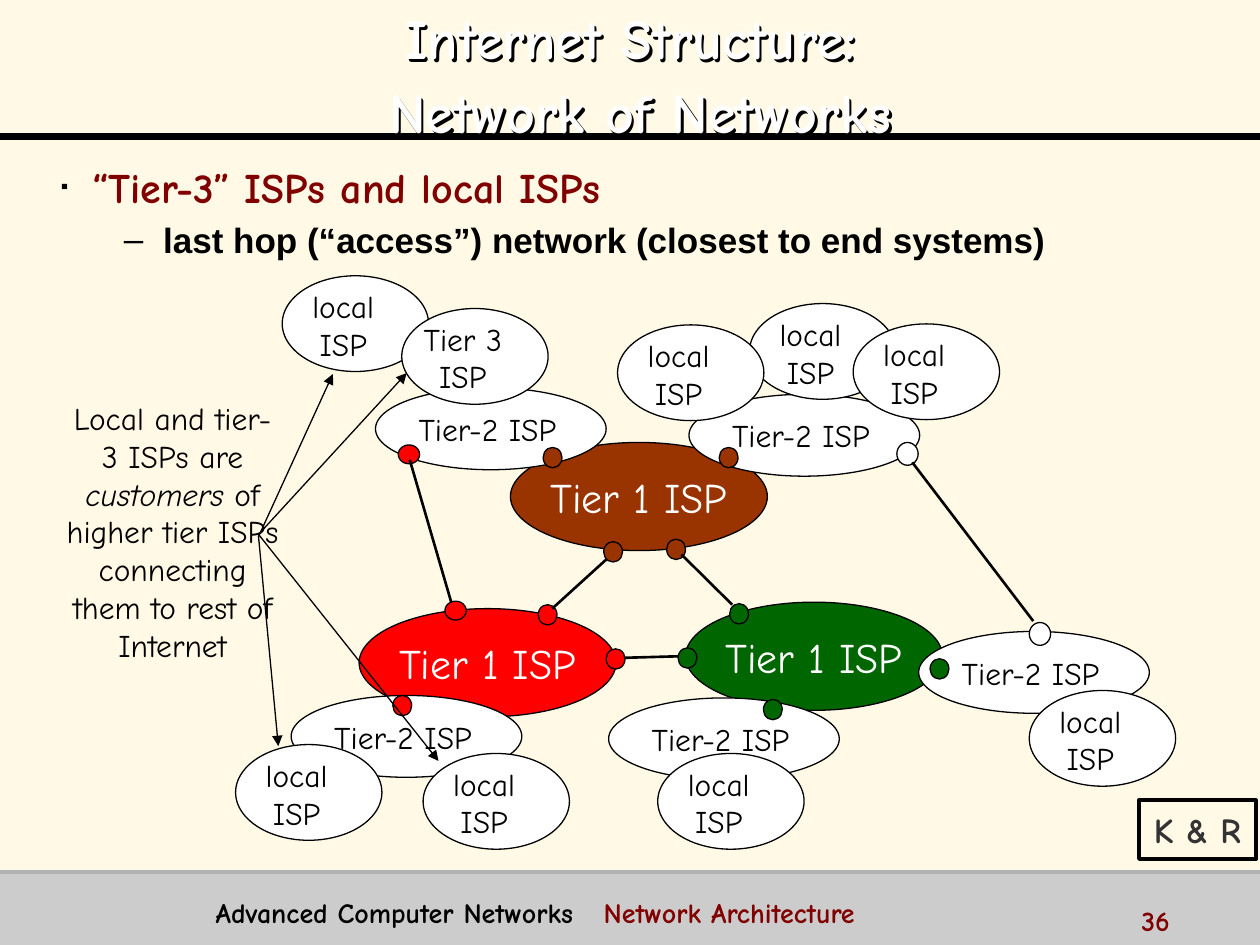
from dataclasses import dataclass

import pptx
import pptx.dml.color
import pptx.enum.shapes
import pptx.enum.text
import pptx.oxml.ns
import pptx.util
from lxml import etree

Cm, Pt = pptx.util.Cm, pptx.util.Pt
MSO_SHAPE = pptx.enum.shapes.MSO_SHAPE
ANCHOR = pptx.enum.text.MSO_ANCHOR
CENTER = pptx.enum.text.PP_ALIGN.CENTER

COMIC = "Comic Neue"
BLACK, WHITE, MAROON = "000000", "FFFFFF", "800000"
RED, BROWN, GREEN = "FF0000", "993300", "006600"
TIER1_SIZE, TIER2_SIZE, LOCAL_SIZE = (5.18, 2.18), (4.65, 1.65), (2.95, 1.93)
PORT_SIZE, TAP_SIZE, WHITE_TAP_SIZE = (0.38, 0.41), (0.43, 0.38), (0.43, 0.46)


@dataclass
class Oval:
    x: float
    y: float
    color: str = WHITE


@dataclass
class Tier2:
    x: float
    y: float
    port: Oval


@dataclass
class Access:
    x: float
    y: float
    name: str = "local"
    text_width: float = 1.85


@dataclass
class Line:
    x1: float
    y1: float
    x2: float
    y2: float


TIER1 = [Oval(7.24, 12.27, RED), Oval(10.29, 8.92, BROWN), Oval(13.82, 12.14, GREEN)]
TIER1_PORTS = [
    Oval(14.71, 12.17, GREEN), Oval(13.44, 10.87, BROWN), Oval(12.17, 10.92, BROWN),
    Oval(10.85, 12.19, RED), Oval(12.22, 13.08, RED), Oval(13.67, 13.06, GREEN),
]
TIER1_LINKS = [
    Line(12.6, 13.26, 13.67, 13.23), Line(13.74, 11.18, 14.76, 12.19),
    Line(11.13, 12.27, 12.22, 11.28),
]
TIER2 = [
    Tier2(13.89, 7.95, Oval(14.5, 9.02, BROWN)),
    Tier2(7.57, 7.82, Oval(10.95, 9.02, BROWN)),
    Tier2(5.87, 14.02, Oval(7.92, 14.02, RED)),
    Tier2(12.27, 14.07, Oval(15.39, 14.1, GREEN)),
    Tier2(18.52, 12.73, Oval(18.75, 13.28, GREEN)),
]
ACCESS = [
    Access(15.11, 6.12), Access(12.45, 6.55), Access(17.2, 6.53),
    Access(4.75, 15.01), Access(5.69, 5.56), Access(8.1, 6.22, "Tier 3", 2.36),
    Access(8.53, 15.19), Access(13.26, 15.19), Access(20.75, 13.92),
]
NOTE_ARROWS = [
    Line(5.21, 10.82, 6.71, 7.54), Line(5.26, 10.72, 8.2, 7.52),
    Line(5.21, 10.8, 5.61, 15.04), Line(5.21, 10.77, 8.84, 15.34),
]


def rgb(color: str):
    return pptx.dml.color.RGBColor.from_string(color)


def child(parent, tag: str, **attrs: str):
    return etree.SubElement(parent, pptx.oxml.ns.qn(tag), attrs)


def style(p, size: float, color: str = BLACK, bold: bool = False, font: str = COMIC) -> None:
    """Format every run of a paragraph."""
    for r in p.runs:
        r.font.name, r.font.size, r.font.bold = font, Pt(size), bold
        r.font.color.rgb = rgb(color)


def add_shape(s, kind, x: float, y: float, w: float, h: float,
              fill: str | None, line: str | None = BLACK, width: float = 0.75):
    sp = s.shapes.add_shape(kind, Cm(x), Cm(y), Cm(w), Cm(h))
    sp.shadow.inherit = False
    if fill:
        sp.fill.solid()
        sp.fill.fore_color.rgb = rgb(fill)
    else:
        sp.fill.background()
    if line:
        sp.line.color.rgb = rgb(line)
        sp.line.width = Pt(width)
    else:
        sp.line.fill.background()
    return sp


def add_oval(s, oval: Oval, size: tuple[float, float]):
    return add_shape(s, MSO_SHAPE.OVAL, oval.x, oval.y, *size, oval.color)


def add_label(sp, text: str, size: float, color: str, bold: bool = False) -> None:
    """Centre one unwrapped line in a shape."""
    tf = sp.text_frame
    tf.text, tf.word_wrap, tf.vertical_anchor = text, False, ANCHOR.MIDDLE
    tf.paragraphs[0].alignment = CENTER
    style(tf.paragraphs[0], size, color, bold)


def add_text(s, x: float, y: float, w: float, h: float, text: str, size: float,
             color: str = BLACK, bold: bool = False, align=None, wrap: bool = True):
    sp = s.shapes.add_textbox(Cm(x), Cm(y), Cm(w), Cm(h))
    tf = sp.text_frame
    tf.text, tf.word_wrap = text, wrap
    for p in tf.paragraphs:
        p.alignment = align
        style(p, size, color, bold)
    return sp


def add_line(s, line: Line, width: float, color: str = BLACK, arrow: bool = False) -> None:
    cxn = s.shapes.add_connector(pptx.enum.shapes.MSO_CONNECTOR.STRAIGHT,
                                 Cm(line.x1), Cm(line.y1), Cm(line.x2), Cm(line.y2))
    cxn.line.color.rgb = rgb(color)
    cxn.line.width = Pt(width)
    if arrow:
        child(cxn.line._get_or_add_ln(), "a:tailEnd", type="triangle")
    child(cxn._element.spPr, "a:effectLst")


def add_bullet(p, char: str, indent: float, hanging: float, percent: int) -> None:
    pPr = p._p.get_or_add_pPr()
    pPr.set("marL", str(Cm(indent)))
    pPr.set("indent", str(-Cm(hanging)))
    child(child(pPr, "a:buClr"), "a:srgbClr", val=BLACK)
    child(pPr, "a:buSzPct", val=str(percent * 1000))
    child(pPr, "a:buFont", typeface="Arial")
    child(pPr, "a:buChar", char=char)


def add_frame(s) -> None:
    """Draw the footer band and the two rules."""
    add_shape(s, MSO_SHAPE.RECTANGLE, 0, 17.58, 25.4, 1.47, "CCCCCC", None)
    add_line(s, Line(0, 2.75, 25.4, 2.75), 4)
    add_line(s, Line(0, 17.58, 25.4, 17.58), 2, "B2B2B2")


def add_body(s) -> None:
    sp = add_text(s, 0.98, 3.13, 23.44, 2.54,
                  "“Tier-3” ISPs and local ISPs\n"
                  "last hop (“access”) network (closest to end systems)", 24, MAROON, True)
    topic, detail = sp.text_frame.paragraphs
    add_bullet(topic, "▪", 0.64, 0.64, 50)
    add_bullet(detail, "–", 2.06, 0.79, 100)
    detail.level = 1
    detail.space_before = Pt(4)
    style(detail, 20, BLACK, True, "Arial")


def add_network(s) -> None:
    for isp in TIER1:
        add_label(add_oval(s, isp, TIER1_SIZE), "Tier 1 ISP", 24, WHITE)
    for port in TIER1_PORTS:
        add_oval(s, port, PORT_SIZE)
    for link in TIER1_LINKS:
        add_line(s, link, 1.5)
    for isp in TIER2:
        add_oval(s, Oval(isp.x, isp.y), TIER2_SIZE)
        add_text(s, isp.x + 0.39, isp.y + 0.32, 3.73, 1.02, "Tier-2 ISP", 18,
                 align=CENTER, wrap=False)
        add_oval(s, isp.port, PORT_SIZE)
    add_oval(s, Oval(8.03, 8.97, RED), TAP_SIZE)
    add_line(s, Line(8.26, 9.27, 9.14, 12.29), 1.5)
    add_oval(s, Oval(8.97, 12.12, RED), TAP_SIZE)
    for tap in (Oval(18.08, 8.92), Oval(20.75, 12.55)):
        add_oval(s, tap, WHITE_TAP_SIZE)
    add_line(s, Line(18.39, 9.32, 20.83, 12.52), 1.5)
    for isp in ACCESS:
        add_oval(s, Oval(isp.x, isp.y), LOCAL_SIZE)
        add_text(s, isp.x + 1.23 - isp.text_width / 2, isp.y + 0.1, isp.text_width, 1.78,
                 f"{isp.name}\nISP", 18, align=CENTER, wrap=False)


def add_note(s) -> None:
    sp = add_text(s, 0.98, 7.92, 5, 6.35,
                  "Local and tier- 3 ISPs are \nhigher tier ISPs\n"
                  "connecting them to rest of Internet", 18, align=CENTER)
    p = sp.text_frame.paragraphs[0]
    for text in ("customers", " of"):
        p.add_run().text = text
    style(p, 18)
    p.runs[1].font.italic = True
    for arrow in NOTE_ARROWS:
        add_line(s, arrow, 0.75, arrow=True)


def add_title(s) -> None:
    sp = add_text(s, 0.51, 0.33, 24.41, 2.21, "Internet Structure:\v Network of Networks",
                  32, WHITE, True, CENTER)
    sp.text_frame.vertical_anchor = ANCHOR.MIDDLE
    sp.text_frame.paragraphs[0].line_spacing = 1.1
    effects = child(sp._element.spPr, "a:effectLst")
    shadow = child(effects, "a:outerShdw", dist=str(Pt(2)), dir="2700000", algn="tl")
    child(shadow, "a:srgbClr", val=BLACK)


def add_footer(s) -> None:
    box = add_shape(s, MSO_SHAPE.RECTANGLE, 22.96, 16.13, 2.36, 1.19, None, BLACK, 2)
    add_label(box, "K & R", 20, "333333", True)
    tf = add_text(s, 3.89, 17.93, 18.49, 0.79, "Advanced Computer Networks\t", 16).text_frame
    tf.margin_left = Cm(0.46)
    p = tf.paragraphs[0]
    child(child(p._p.get_or_add_pPr(), "a:tabLst"), "a:tab", pos=str(Cm(7.82)), algn="l")
    p.add_run().text = "Network Architecture"
    style(p, 16, BLACK, True)
    p.runs[-1].font.color.rgb = rgb(MAROON)
    add_text(s, 22.76, 18.08, 2.54, 0.64, "36", 16, MAROON, True)


def main() -> None:
    prs = pptx.Presentation()
    prs.slide_width, prs.slide_height = Cm(25.4), Cm(19.05)
    s = prs.slides.add_slide(prs.slide_layouts[6])
    s.background.fill.solid()
    s.background.fill.fore_color.rgb = rgb("FFF9E6")
    for draw in (add_frame, add_body, add_network, add_note, add_title, add_footer):
        draw(s)
    prs.save("out.pptx")


if __name__ == "__main__":
    main()
